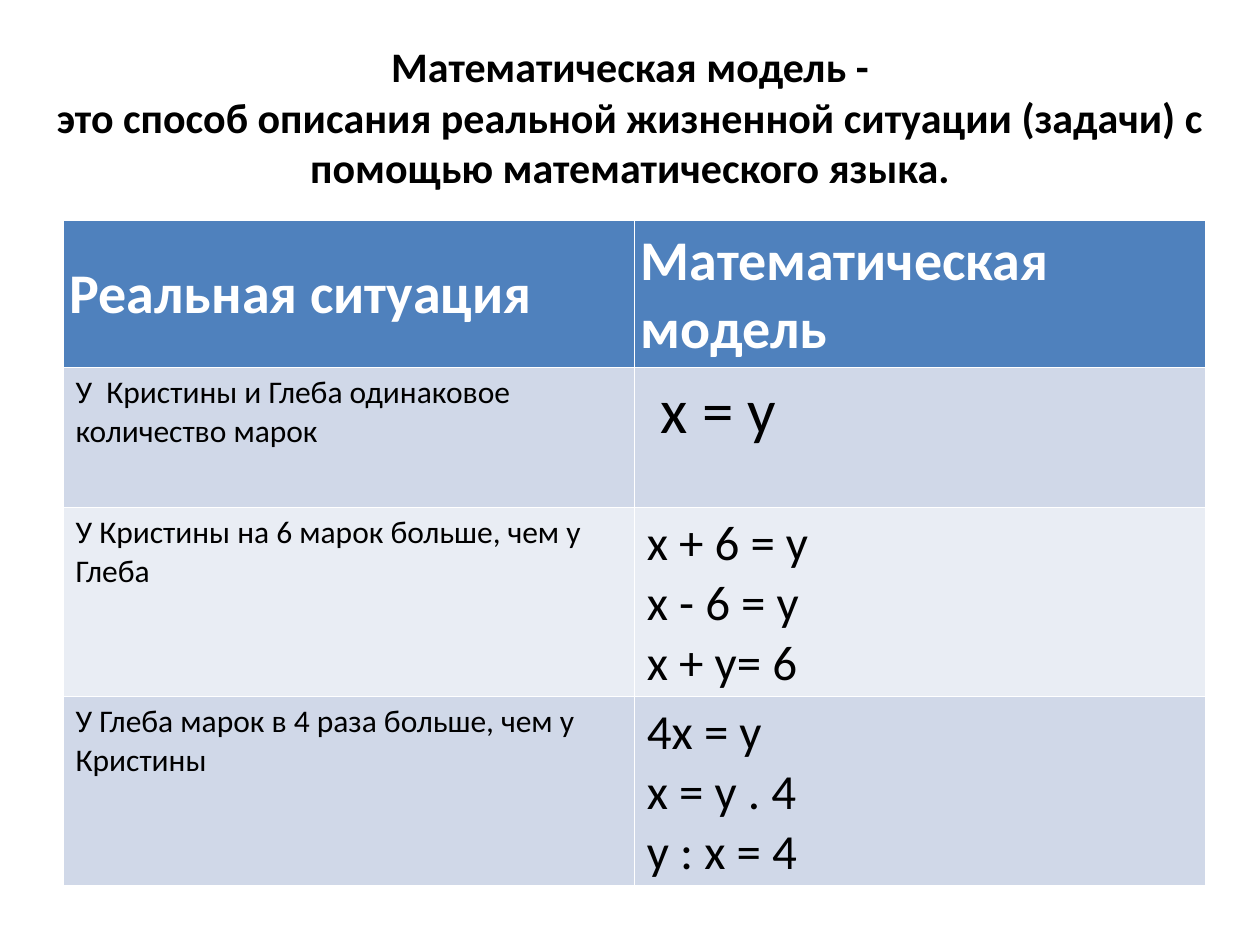
from pptx import Presentation
from pptx.dml.color import RGBColor
from pptx.enum import text
from pptx.util import Inches, Pt

HEAD = ["Реальная ситуация", "Математическая модель"]
ROWS = [
    ("У  Кристины и Глеба одинаковое количество марок", "x = y", 36, 0.21),
    ("У Кристины на 6 марок больше, чем у Глеба",
     "x + 6 = y\nx - 6 = y\nx + y= 6", 28, 0.1),
    ("У Глеба марок в 4 раза больше, чем у Кристины",
     "4x = y\nx = y . 4\ny : x = 4", 28, 0.1),
]
BANDS = ["D0D8E8", "E9EDF4"]


def color(code):
    return RGBColor.from_string(code)


def write(frame, words, size, ink="000000", bold=False, align=None):
    frame.text = words
    style = {"name": "Calibri", "size": Pt(size), "bold": bold}
    for para in frame.paragraphs:
        para.alignment = align
        for run in para.runs:
            for key, value in style.items():
                setattr(run.font, key, value)
            run.font.color.rgb = color(ink)


def paint(cell, fill, anchor, pads):
    cell.fill.solid()
    cell.fill.fore_color.rgb = color(fill)
    cell.vertical_anchor = anchor
    for side, pad in zip(("left", "top", "right", "bottom"), pads):
        setattr(cell, "margin_" + side, Inches(pad))


def title(slide, left, top, width, height):
    box = slide.shapes.add_textbox(
        Inches(left), Inches(top), Inches(width), Inches(height))
    frame = box.text_frame
    frame.word_wrap = True
    frame.vertical_anchor = text.MSO_ANCHOR.MIDDLE
    write(frame, "Математическая модель -\vэто способ описания реальной "
          "жизненной ситуации (задачи) с помощью математического языка.",
          24, bold=True, align=text.PP_ALIGN.CENTER)


def table(slide, left, top, width, height):
    grid = slide.shapes.add_table(
        len(ROWS) + 1, len(HEAD), Inches(left), Inches(top),
        Inches(width), Inches(height)).table
    for col, words in enumerate(HEAD):
        cell = grid.cell(0, col)
        paint(cell, "4F81BD", text.MSO_ANCHOR.MIDDLE, [0.05] * 4)
        write(cell.text_frame, words, 32, "FFFFFF", True)
    for row, (fact, model, size, pad) in enumerate(ROWS, 1):
        fill = BANDS[(row - 1) % 2]
        parts = [(fact, 18, 0.1), (model, size, pad)]
        for col, (words, size, pad) in enumerate(parts):
            cell = grid.cell(row, col)
            paint(cell, fill, text.MSO_ANCHOR.TOP, (pad, 0.05, 0.1, 0.05))
            write(cell.text_frame, words, size)


def main():
    deck = Presentation()
    deck.slide_width, deck.slide_height = Inches(10), Inches(7.5)
    slide = deck.slides.add_slide(deck.slide_layouts[6])
    title(slide, 0, 0.3, 10, 1.25)
    table(slide, 0.5, 1.75, 9.07, 4.44)
    deck.save("out.pptx")


if __name__ == "__main__":
    main()
